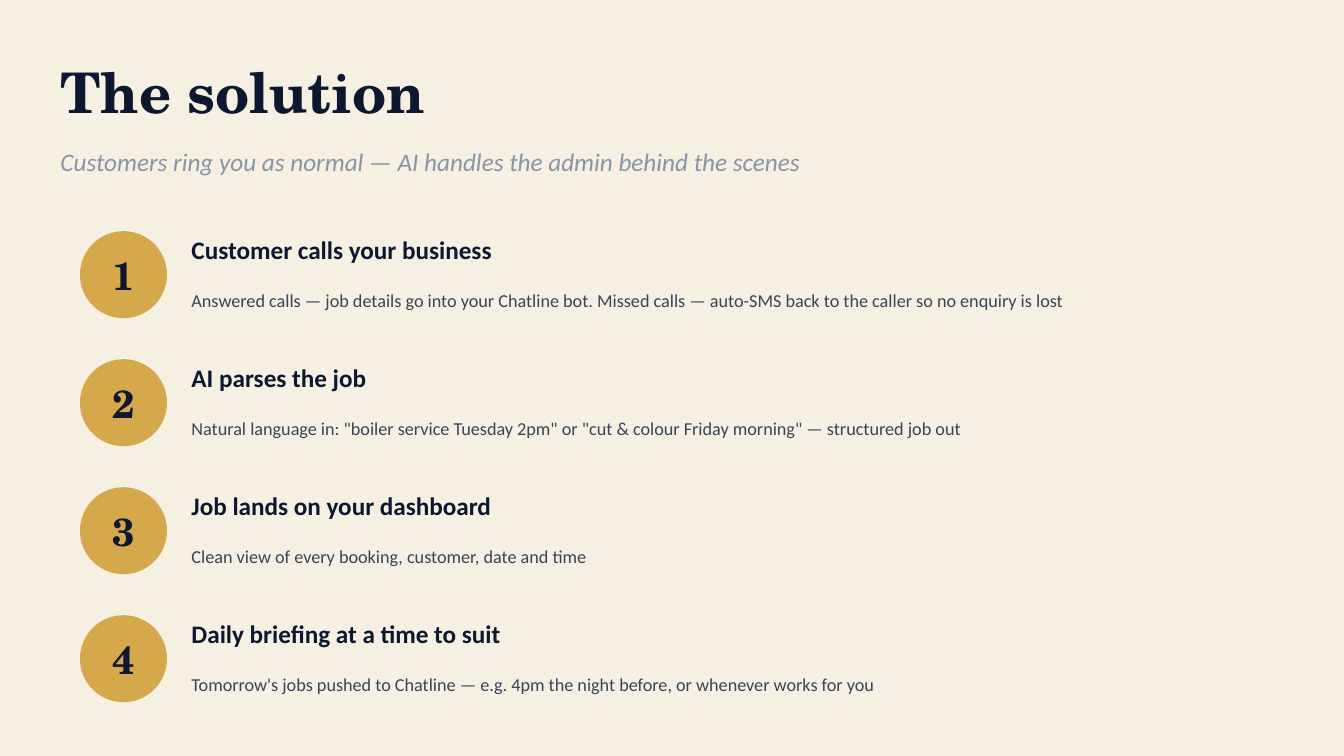
from dataclasses import dataclass

from pptx import Presentation
from pptx.dml.color import RGBColor
from pptx.enum.shapes import MSO_SHAPE
from pptx.enum.text import MSO_ANCHOR, MSO_AUTO_SIZE, PP_ALIGN
from pptx.util import Pt

OVAL = MSO_SHAPE.OVAL
MIDDLE = MSO_ANCHOR.MIDDLE
NO_AUTOFIT = MSO_AUTO_SIZE.NONE
LEFT, CENTER = PP_ALIGN.LEFT, PP_ALIGN.CENTER

SERIF, SANS = "TeX Gyre Schola", "Calibri"
CREAM, NAVY, GOLD = "F5F0E1", "0D1730", "D4A84B"
MUTED, SLATE = "8A94A6", "3A4358"

MARGIN, HEADER_WIDTH = 43.2, 864
BADGE_LEFT, BADGE_TOP, BADGE_SIZE = 57.6, 165.6, 61.2
STEP_PITCH = 91.44
STEP_LEFT, STEP_WIDTH = 136.8, 777.6
HEADING_RISE, HEADING_HEIGHT, DETAIL_HEIGHT = 3.6, 32.4, 39.6


@dataclass(frozen=True)
class Step:
    heading: str
    detail: str


STEPS = [
    Step("Customer calls your business",
         "Answered calls — job details go into your Chatline bot. "
         "Missed calls — auto-SMS back to the caller so no enquiry is lost"),
    Step("AI parses the job",
         'Natural language in: "boiler service Tuesday 2pm" or '
         '"cut & colour Friday morning" — structured job out'),
    Step("Job lands on your dashboard",
         "Clean view of every booking, customer, date and time"),
    Step("Daily briefing at a time to suit",
         "Tomorrow's jobs pushed to Chatline — e.g. 4pm the night before, "
         "or whenever works for you"),
]


def rgb(value: str) -> RGBColor:
    return RGBColor.from_string(value)


def write(shape, text: str, *, size: float, color: str, font: str = SANS,
          bold: bool = False, italic: bool = False, align=LEFT) -> None:
    """Fill a shape with one vertically centred, formatted paragraph."""
    frame = shape.text_frame
    frame.auto_size = NO_AUTOFIT
    frame.word_wrap = True
    frame.vertical_anchor = MIDDLE
    frame.margin_left = frame.margin_right = 0
    frame.margin_top = frame.margin_bottom = 0
    paragraph = frame.paragraphs[0]
    paragraph.alignment = align
    run = paragraph.add_run()
    run.text = text
    run.font.name = font
    run.font.size = Pt(size)
    run.font.bold = bold
    run.font.italic = italic
    run.font.color.rgb = rgb(color)


def add_textbox(slide, left: float, top: float, width: float, height: float):
    return slide.shapes.add_textbox(Pt(left), Pt(top), Pt(width), Pt(height))


def add_header(slide) -> None:
    title = slide.shapes.title
    title.left, title.top = Pt(MARGIN), Pt(36)
    title.width, title.height = Pt(HEADER_WIDTH), Pt(57.6)
    write(title, "The solution", size=40, color=NAVY, font=SERIF, bold=True)
    subtitle = add_textbox(slide, MARGIN, 97.2, HEADER_WIDTH, 36)
    write(subtitle,
          "Customers ring you as normal — AI handles the admin behind the scenes",
          size=18, color=MUTED, italic=True)


def add_step(slide, index: int, step: Step) -> None:
    top = BADGE_TOP + index * STEP_PITCH
    badge = slide.shapes.add_shape(
        OVAL, Pt(BADGE_LEFT), Pt(top), Pt(BADGE_SIZE), Pt(BADGE_SIZE))
    badge.shadow.inherit = False
    badge.fill.solid()
    badge.fill.fore_color.rgb = rgb(GOLD)
    badge.line.color.rgb = rgb(GOLD)
    badge.line.width = Pt(1)
    write(badge, str(index + 1), size=28, color=NAVY, font=SERIF,
          bold=True, align=CENTER)

    heading_top = top - HEADING_RISE
    heading = add_textbox(slide, STEP_LEFT, heading_top, STEP_WIDTH, HEADING_HEIGHT)
    write(heading, step.heading, size=18, color=NAVY, bold=True)
    detail = add_textbox(slide, STEP_LEFT, heading_top + HEADING_HEIGHT,
                         STEP_WIDTH, DETAIL_HEIGHT)
    write(detail, step.detail, size=13, color=SLATE)


def main() -> None:
    deck = Presentation()
    deck.slide_width, deck.slide_height = Pt(960), Pt(540)
    title_only = deck.slide_layouts[5]
    slide = deck.slides.add_slide(title_only)
    slide.background.fill.solid()
    slide.background.fill.fore_color.rgb = rgb(CREAM)
    add_header(slide)
    for index, step in enumerate(STEPS):
        add_step(slide, index, step)
    deck.save("out.pptx")


if __name__ == "__main__":
    main()
